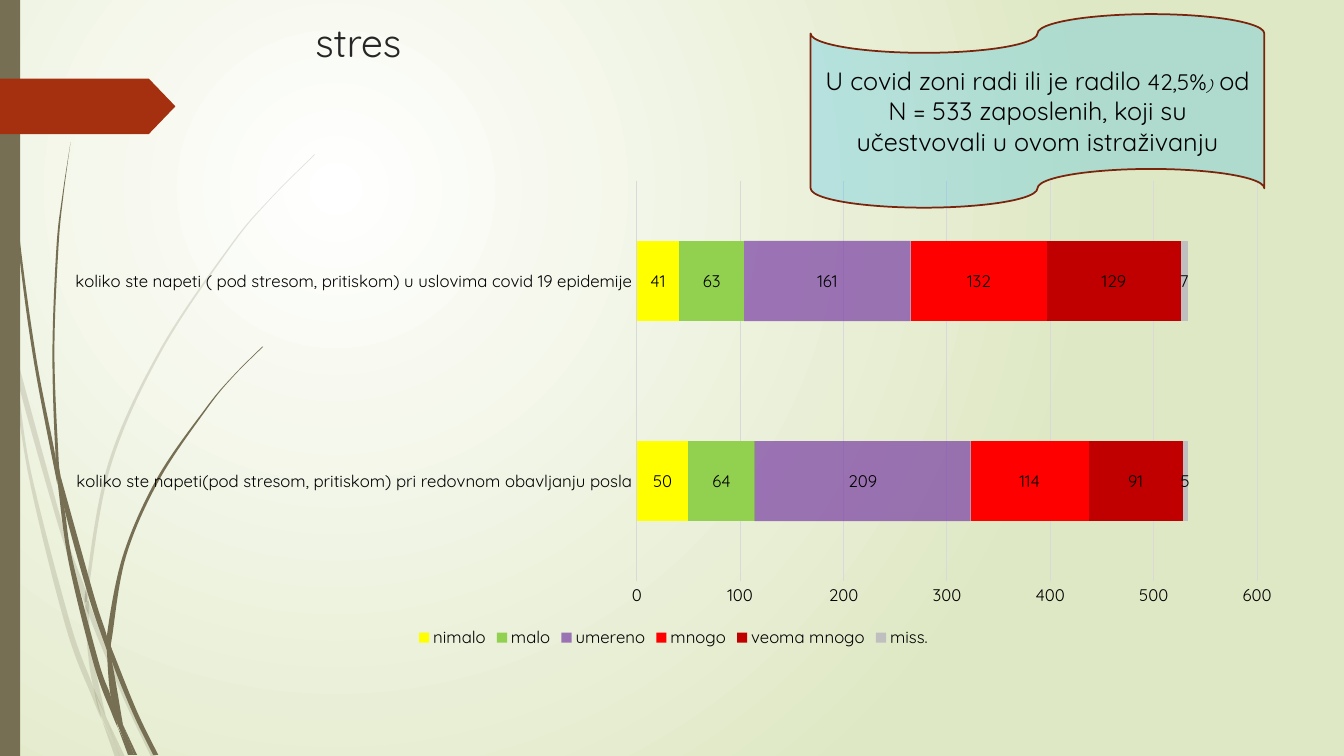
from dataclasses import dataclass

from lxml import etree
from pptx import Presentation
from pptx.chart.data import CategoryChartData
from pptx.dml.color import RGBColor
from pptx.enum.chart import XL_CHART_TYPE as ChartType
from pptx.enum.chart import XL_LABEL_POSITION as LabelPosition
from pptx.enum.chart import XL_LEGEND_POSITION as LegendPosition
from pptx.enum.chart import XL_TICK_MARK as TickMark
from pptx.enum.shapes import MSO_SHAPE as Preset
from pptx.enum.text import MSO_ANCHOR as Anchor
from pptx.enum.text import PP_ALIGN as Align
from pptx.oxml.ns import qn
from pptx.util import Inches, Pt


@dataclass(frozen=True)
class Theme:
    font: str = "Quicksand"
    white: str = "FFFFFF"
    meadow: str = "DFE8C4"
    olive: str = "766F54"
    rust: str = "A53010"
    dark_rust: str = "7A240C"
    sky: str = "00B0F0"
    title_ink: str = "262626"
    ink: str = "000000"
    grid: str = "D9D9D9"
    title_size: int = 28
    note_size: int = 18
    share_size: int = 16
    bracket_size: int = 11
    chart_size: int = 12


THEME = Theme()

# Each piece of grass is its left and right edge, both from the top down, in inches.
PALE_GRASS = [
    ([(0, 2.99), (0.1, 3.44), (0.11, 3.5)], [(0, 2.82), (0.09, 3.22), (0.11, 3.5)]),
    ([(0.14, 3.45), (0.17, 3.76), (0.58, 5.22), (0.84, 5.99)],
     [(0.14, 3.45), (0.62, 5.2), (0.85, 5.86), (0.84, 5.99)]),
    ([(0.88, 5.96), (0.88, 6.1), (1.23, 6.94), (1.5, 7.51)],
     [(0.88, 5.96), (0.92, 6.07), (1.27, 6.92), (1.55, 7.51)]),
    ([(1.05, 7.11), (1.19, 7.51)], [(1.05, 7.11), (1.24, 7.51)]),
    ([(0.11, 3.5), (0.28, 4.7), (0.65, 6.21), (0.92, 6.93), (1.01, 7.14)],
     [(0.11, 3.5), (0.17, 3.76), (0.31, 4.69), (0.7, 6.19), (0.93, 6.83), (1.01, 7.14)]),
    ([(0.84, 5.99), (0.87, 6.46), (0.93, 6.83), (1.05, 7.11)],
     [(0.84, 5.99), (0.88, 6.1), (0.91, 6.46), (1.05, 7.11)]),
    ([(3.12, 1.53), (2.68, 1.97), (2.28, 2.44), (1.58, 3.48), (1.07, 4.61), (0.85, 5.84), (0.88, 5.96)],
     [(3.12, 1.54), (2.68, 1.98), (2.29, 2.45), (1.6, 3.49), (1.1, 4.62), (0.88, 5.84), (0.88, 5.96)]),
    ([(1.01, 7.14), (1.14, 7.51)], [(1.01, 7.14), (1.19, 7.51)]),
    ([(0.85, 5.86), (0.84, 5.99), (0.88, 6.1)], [(0.85, 5.86), (0.88, 5.96), (0.88, 6.1)]),
    ([(0.93, 6.83), (0.99, 7.07), (1.19, 7.51)], [(0.93, 6.83), (1.05, 7.11), (1.19, 7.51)]),
]
DARK_GRASS = [
    ([(0.03, 0), (0.07, 1.1), (0.17, 2.33), (0.33, 3.55), (0.57, 4.81)],
     [(0.04, 0), (0.08, 1.09), (0.19, 2.32), (0.36, 3.55), (0.55, 4.53), (0.57, 4.81)]),
    ([(0.6, 4.72), (0.64, 5.05), (0.88, 5.92), (1.06, 6.45)],
     [(0.6, 4.72), (0.93, 5.9), (1.06, 6.31), (1.06, 6.45)]),
    ([(1.1, 6.41), (1.11, 6.56), (1.32, 7.08), (1.52, 7.49)],
     [(1.1, 6.41), (1.13, 6.49), (1.36, 7.06), (1.57, 7.49)]),
    ([(0.57, 4.77), (0.68, 5.57), (0.93, 6.59), (1.11, 7.08), (1.17, 7.22)],
     [(0.57, 4.77), (0.64, 5.05), (0.72, 5.56), (0.98, 6.57), (1.1, 6.91), (1.17, 7.22)]),
    ([(0.7, 1.41), (0.62, 1.93), (0.56, 2.45), (0.52, 3.49), (0.55, 4.49), (0.6, 4.72)],
     [(0.7, 1.41), (0.63, 1.93), (0.58, 2.45), (0.54, 3.49), (0.58, 4.53), (0.6, 4.72)]),
    ([(1.22, 7.19), (1.33, 7.49)], [(1.22, 7.19), (1.36, 7.49)]),
    ([(0.55, 4.49), (0.57, 4.77), (0.64, 5.05)], [(0.55, 4.49), (0.6, 4.72), (0.64, 5.05)]),
    ([(2.6, 3.44), (2.31, 3.73), (2.04, 4.05), (1.56, 4.74), (1.22, 5.51), (1.06, 6.31), (1.1, 6.41)],
     [(2.61, 3.44), (2.31, 3.74), (2.05, 4.06), (1.58, 4.76), (1.25, 5.52), (1.11, 6.33), (1.1, 6.41)]),
    ([(1.17, 7.22), (1.27, 7.49)], [(1.17, 7.22), (1.31, 7.49)]),
    ([(1.06, 6.45), (1.1, 6.91), (1.22, 7.19)], [(1.06, 6.45), (1.11, 6.56), (1.22, 7.19)]),
    ([(1.06, 6.31), (1.06, 6.45), (1.11, 6.56)], [(1.06, 6.31), (1.1, 6.41), (1.11, 6.56)]),
    ([(1.1, 6.91), (1.16, 7.17), (1.3, 7.49)], [(1.1, 6.91), (1.22, 7.19), (1.33, 7.49)]),
]

CATEGORIES = [
    "koliko ste napeti(pod stresom, pritiskom) pri redovnom obavljanju posla",
    "koliko ste napeti ( pod stresom, pritiskom) u uslovima covid 19 epidemije",
]
ANSWERS = [  # name, values, colour, opacity in percent
    ("nimalo", (50, 41), "FFFF00", 100),
    ("malo", (64, 63), "92D050", 100),
    ("umereno", (209, 161), "7030A0", 65),
    ("mnogo", (114, 132), "FF0000", 100),
    ("veoma mnogo", (91, 129), "C00000", 100),
    ("miss.", (5, 7), "BFBFBF", 100),
]


def paint(fill, color, opacity=100):
    fill.solid()
    fill.fore_color.rgb = RGBColor.from_string(color)
    if opacity < 100:
        for node in fill._xPr.iter(qn("a:srgbClr")):
            etree.SubElement(node, qn("a:alpha"), val=str(opacity * 1000))


def style_shape(shape, color, opacity=100, line=None):
    shape.shadow.inherit = False
    paint(shape.fill, color, opacity)
    if line:
        shape.line.color.rgb = RGBColor.from_string(line)
        shape.line.width = Pt(1.25)
    else:
        shape.line.fill.background()


def style_font(font, size, color=THEME.ink, italic=None):
    font.name, font.size, font.italic = THEME.font, Pt(size), italic
    font.color.rgb = RGBColor.from_string(color)


def add_span(para, text, **style):
    span = para.add_run()
    span.text = text
    style_font(span.font, **style)


def curve_handles(edge):
    """Return the two Bezier handles and the end of each smooth step along an edge."""
    padded = [edge[0], *edge, edge[-1]]
    return [([q + (r - p) / 6 for p, q, r in zip(a, b, c)],
             [r - (s - q) / 6 for q, r, s in zip(b, c, d)], c)
            for a, b, c, d in zip(padded, padded[1:], padded[2:], padded[3:])]


def add_grass(page, left_edge, right_edge, opacity):
    down, up = ([(Inches(x), Inches(y)) for x, y in edge]
                for edge in (left_edge, right_edge[::-1]))
    builder = page.shapes.build_freeform(*down[0])
    builder.add_line_segments(down[1:] + up, close=True)
    piece = builder.convert_to_shape()
    style_shape(piece, THEME.olive, opacity)

    straight = piece._element.findall(".//" + qn("a:lnTo"))
    steps = curve_handles(down) + [(down[-1], up[0], up[0])] + curve_handles(up)
    for line, handles in zip(straight, steps):
        curve = etree.Element(qn("a:cubicBezTo"))
        for x, y in handles:
            etree.SubElement(curve, qn("a:pt"), x=str(round(x - piece.left)),
                             y=str(round(y - piece.top)))
        line.getparent().replace(line, curve)


def add_backdrop(page, height):
    """Radial background, grass, side band and arrow tab."""
    fill = page.background.fill
    fill.gradient()
    for stop, color in zip(fill.gradient_stops, (THEME.white, THEME.meadow)):
        stop.color.rgb = RGBColor.from_string(color)
    gradient = page.element.find(".//" + qn("a:gradFill"))
    gradient.remove(gradient.find(qn("a:lin")))
    circle = etree.SubElement(gradient, qn("a:path"))
    circle.set("path", "circle")
    etree.SubElement(circle, qn("a:fillToRect"), l="50000", t="50000", r="100000", b="100000")

    for pieces, opacity in ((PALE_GRASS, 20), (DARK_GRASS, 100)):
        for left_edge, right_edge in pieces:
            add_grass(page, left_edge, right_edge, opacity)
    band = page.shapes.add_shape(Preset.RECTANGLE, 0, 0, Inches(0.2), height)
    style_shape(band, THEME.olive)
    tab = page.shapes.add_shape(Preset.PENTAGON, 0, Inches(0.78), Inches(1.74), Inches(0.55))
    tab.adjustments[0] = 0.48
    style_shape(tab, THEME.rust)


def add_title(page, box, text):
    frame = page.shapes.add_textbox(*box).text_frame
    frame.word_wrap = True
    add_span(frame.paragraphs[0], text, size=THEME.title_size, color=THEME.title_ink)


def add_stress_chart(page, box):
    data = CategoryChartData()
    data.categories = CATEGORIES
    for name, values, _, _ in ANSWERS:
        data.add_series(name, values)
    chart = page.shapes.add_chart(ChartType.BAR_STACKED, *box, data).chart
    style_font(chart.font, THEME.chart_size)
    chart.has_title = False
    chart.has_legend = True
    chart.legend.position = LegendPosition.BOTTOM
    chart.legend.include_in_layout = False

    plot = chart.plots[0]
    plot.gap_width, plot.overlap, plot.vary_by_categories = 150, 100, False
    for series, (_, _, color, opacity) in zip(plot.series, ANSWERS):
        paint(series.format.fill, color, opacity)
        labels = series.data_labels
        labels.show_value = True
        labels.position = LabelPosition.CENTER
        style_font(labels.font, THEME.chart_size)

    values, names = chart.value_axis, chart.category_axis
    for part in (chart.legend, values.tick_labels, names.tick_labels):
        style_font(part.font, THEME.chart_size)
    for axis in (values, names):
        axis.major_tick_mark = axis.minor_tick_mark = TickMark.NONE
    values.format.line.fill.background()
    values.has_major_gridlines = True
    for line in (names.format.line, values.major_gridlines.format.line):
        line.color.rgb = RGBColor.from_string(THEME.grid)
        line.width = Pt(0.75)


def add_note(page, box):
    note = page.shapes.add_shape(Preset.FLOWCHART_PUNCHED_TAPE, *box)
    style_shape(note, THEME.sky, 22, THEME.dark_rust)
    frame = note.text_frame
    frame.word_wrap = True
    frame.vertical_anchor = Anchor.MIDDLE
    para = frame.paragraphs[0]
    para.alignment = Align.CENTER
    add_span(para, "U covid zoni radi ili je radilo ", size=THEME.note_size)
    add_span(para, "42,5%", size=THEME.share_size)
    add_span(para, ")", size=THEME.bracket_size, italic=True)
    add_span(para, " od N = 533 zaposlenih, koji su učestvovali u ovom istraživanju",
             size=THEME.note_size)


def main():
    deck = Presentation()
    deck.slide_width, deck.slide_height = Inches(13.33), Inches(7.5)
    page = deck.slides.add_slide(deck.slide_layouts[6])
    add_backdrop(page, deck.slide_height)
    add_title(page, [Inches(n) for n in (3.03, 0.13, 6.93, 0.62)], "stres")
    add_stress_chart(page, [Inches(n) for n in (0.5, 1.7, 12.36, 4.77)])
    add_note(page, [Inches(n) for n in (8.04, 0.14, 4.5, 1.92)])
    deck.save("out.pptx")


if __name__ == "__main__":
    main()
